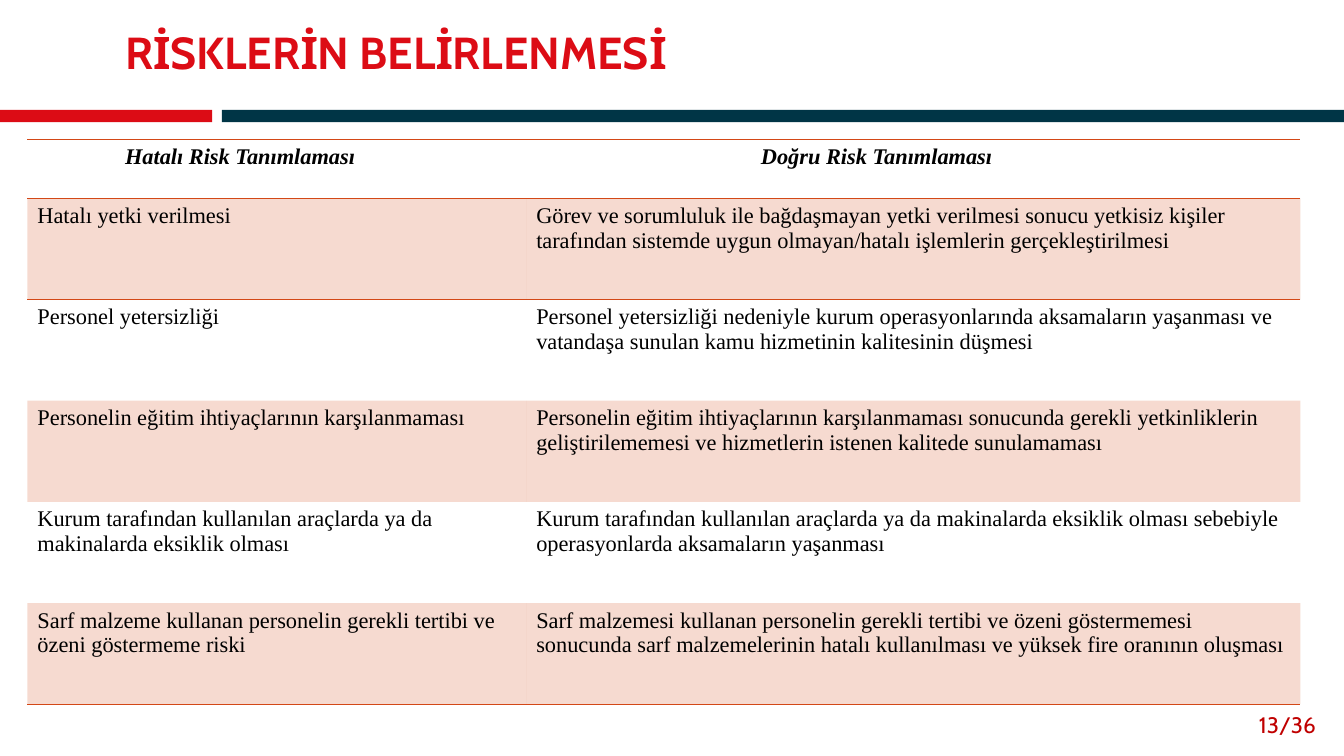
from lxml.etree import SubElement
from pptx import Presentation
from pptx.dml.color import RGBColor
from pptx.enum.shapes import MSO_SHAPE as Shape
from pptx.enum.text import MSO_ANCHOR as Anchor, PP_ALIGN as Align
from pptx.oxml import parse_xml
from pptx.oxml.ns import nsdecls, qn
from pptx.util import Cm, Pt

# Content
TITLE = "RİSKLERİN BELİRLENMESİ"
PAGE = "13/36"
HEADINGS = ("Hatalı Risk Tanımlaması", "Doğru Risk Tanımlaması")
RISKS = [
    ("Hatalı yetki verilmesi",
     "Görev ve sorumluluk ile bağdaşmayan yetki verilmesi sonucu yetkisiz kişiler "
     "tarafından sistemde uygun olmayan/hatalı işlemlerin gerçekleştirilmesi"),
    ("Personel yetersizliği",
     "Personel yetersizliği nedeniyle kurum operasyonlarında aksamaların yaşanması ve "
     "vatandaşa sunulan kamu hizmetinin kalitesinin düşmesi"),
    ("Personelin eğitim ihtiyaçlarının karşılanmaması",
     "Personelin eğitim ihtiyaçlarının karşılanmaması sonucunda gerekli yetkinliklerin "
     "geliştirilememesi ve hizmetlerin istenen kalitede sunulamaması"),
    ("Kurum tarafından kullanılan araçlarda ya da makinalarda eksiklik olması",
     "Kurum tarafından kullanılan araçlarda ya da makinalarda eksiklik olması sebebiyle "
     "operasyonlarda aksamaların yaşanması"),
    ("Sarf malzeme kullanan personelin gerekli tertibi ve özeni göstermeme riski",
     "Sarf malzemesi kullanan personelin gerekli tertibi ve özeni göstermemesi "
     "sonucunda sarf malzemelerinin hatalı kullanılması ve yüksek fire oranının oluşması"),
]

# Look
RED = RGBColor(0xDC, 0x0C, 0x15)
NAVY = RGBColor(0x00, 0x35, 0x46)
PAGE_RED = RGBColor(0xC0, 0x00, 0x00)
ORANGE = RGBColor(0xD3, 0x48, 0x17)
BLACK = RGBColor(0, 0, 0)
HEAD_FONT, TABLE_FONT = "Cabin", "Times New Roman"
PLAIN_STYLE = "{2D5ABB26-0587-4C30-8999-92F81FD0307C}"

# Measures in cm
WIDTH, HEIGHT = 33.87, 19.05
RULE_TOP, RULE_HEIGHT = 2.77, 0.31
RULES = [(0, 5.35, RED), (5.59, WIDTH - 5.59, NAVY)]
COLUMNS = (12.57, 19.51)
HEADING_HEIGHT, RISK_HEIGHT = 1.49, 2.55
HEADING_INDENT = 2.1


def write(frame, text, font=TABLE_FONT, size=16, color=BLACK, bold=False,
          italic=False, align=Align.LEFT, spacing=1.0):
    frame.word_wrap = True
    paragraph = frame.paragraphs[0]
    paragraph.alignment = align
    paragraph.line_spacing = spacing
    run = paragraph.add_run()
    run.text = text
    run.font.name, run.font.size = font, Pt(size)
    run.font.bold, run.font.italic = bold, italic
    run.font.color.rgb = color


def tint(cell):
    cell.fill.solid()
    cell.fill.fore_color.rgb = ORANGE
    color = cell._tc.tcPr.find(".//" + qn("a:srgbClr"))
    SubElement(color, qn("a:alpha"), val="20000")


def add_borders(cell, sides):
    properties = cell._tc.get_or_add_tcPr()
    for place, side in enumerate(sides):
        properties.insert(place, parse_xml(
            f'<a:ln{side} {nsdecls("a")} w="12700"><a:solidFill>'
            f'<a:srgbClr val="{ORANGE}"/></a:solidFill></a:ln{side}>'))


def main():
    deck = Presentation()
    deck.slide_width, deck.slide_height = Cm(WIDTH), Cm(HEIGHT)
    slide = deck.slides.add_slide(deck.slide_layouts[5])

    # Two-colour rule under the title
    for left, width, color in RULES:
        rule = slide.shapes.add_shape(Shape.RECTANGLE, Cm(left), Cm(RULE_TOP),
                                      Cm(width), Cm(RULE_HEIGHT))
        rule.shadow.inherit = False
        rule.fill.solid()
        rule.fill.fore_color.rgb = color
        rule.line.fill.background()

    # Title
    title = slide.shapes.title
    title.left, title.top, title.width, title.height = Cm(2.9), Cm(0.36), Cm(30.5), Cm(2.03)
    title.text_frame.vertical_anchor = Anchor.MIDDLE
    write(title.text_frame, TITLE, font=HEAD_FONT, size=32, color=RED, bold=True, spacing=0.9)

    # Risk table
    rows = [HEADINGS, *RISKS]
    frame = slide.shapes.add_table(
        len(rows), len(COLUMNS), Cm(0.69), Cm(3.51), Cm(sum(COLUMNS)),
        Cm(HEADING_HEIGHT + RISK_HEIGHT * len(RISKS)))
    table = frame.table
    table.horz_banding = False
    table._tbl.tblPr.find(qn("a:tableStyleId")).text = PLAIN_STYLE
    for column, width in zip(table.columns, COLUMNS):
        column.width = Cm(width)
    for r, texts in enumerate(rows):
        heading = r == 0
        table.rows[r].height = Cm(HEADING_HEIGHT if heading else RISK_HEIGHT)
        for c, text in enumerate(texts):
            cell = table.cell(r, c)
            write(cell.text_frame, text, bold=heading, italic=heading,
                  align=Align.CENTER if heading else Align.LEFT)
            if r % 2:
                tint(cell)
            else:
                cell.fill.background()
            if heading:
                cell.margin_right = Cm(HEADING_INDENT)
                add_borders(cell, "TB")
            elif r == 1:
                add_borders(cell, "T")
            elif r == len(RISKS):
                add_borders(cell, "B")

    # Page number
    page = slide.shapes.add_textbox(Cm(31.12), Cm(17.75), Cm(2.29), Cm(1.02))
    page.text_frame.vertical_anchor = Anchor.MIDDLE
    write(page.text_frame, PAGE, font=HEAD_FONT, color=PAGE_RED, align=Align.RIGHT)

    deck.save("out.pptx")


if __name__ == "__main__":
    main()
